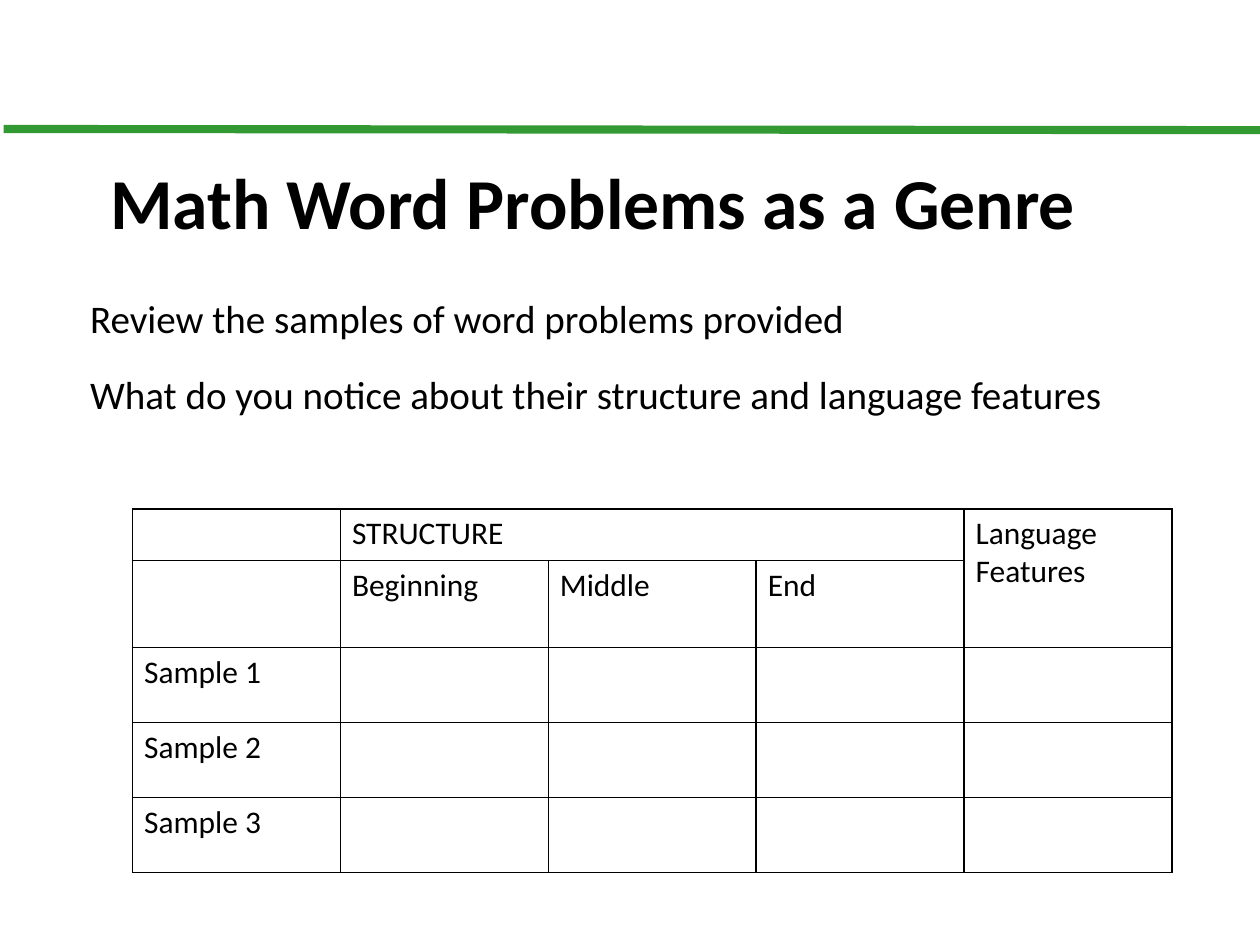
from lxml import etree
from pptx import Presentation
from pptx.dml.color import RGBColor
from pptx.enum.shapes import MSO_CONNECTOR as Connector
from pptx.oxml.ns import qn
from pptx.util import Inches, Pt

BLACK, GREEN = "000000", "339933"


def color(hex_value):
    return RGBColor.from_string(hex_value)


class SlideBuilder:
    """Hold the slide and its text style, and add each kind of element."""

    font_name = "Calibri"

    def __init__(self, slide):
        self.slide = slide

    def style(self, paragraph, size, bold=False):
        font = paragraph.font
        font.name, font.size, font.bold = self.font_name, Pt(size), bold
        font.color.rgb = color(BLACK)

    def rule(self, start, end, hex_value, width):
        line = self.slide.shapes.add_connector(
            Connector.STRAIGHT, *map(Inches, start + end))
        line.line.color.rgb = color(hex_value)
        line.line.width = Pt(width)
        etree.SubElement(line._element.spPr, qn("a:effectLst"))

    def text(self, box, lines, size, bold=False, space_after=0):
        frame = self.slide.shapes.add_textbox(*map(Inches, box)).text_frame
        frame.word_wrap = True
        frame.text = "\n".join(lines)
        for paragraph in frame.paragraphs:
            paragraph.space_after = Pt(space_after)
            self.style(paragraph, size, bold)

    def border(self, cell, width):
        properties = cell._tc.get_or_add_tcPr()
        for index, side in enumerate(("lnL", "lnR", "lnT", "lnB")):
            line = etree.Element(qn(f"a:{side}"), w=str(Pt(width)))
            fill = etree.SubElement(line, qn("a:solidFill"))
            etree.SubElement(fill, qn("a:srgbClr"), val=BLACK)
            properties.insert(index, line)

    def table(self, left, top, column_width, row_heights, rows, merges, size):
        columns = len(rows[0])
        table = self.slide.shapes.add_table(
            len(rows), columns, Inches(left), Inches(top),
            Inches(column_width * columns), Inches(sum(row_heights))).table
        table.first_row = table.horz_banding = False
        for column in table.columns:
            column.width = Inches(column_width)
        for row, height, labels in zip(table.rows, row_heights, rows):
            row.height = Inches(height)
            for cell, label in zip(row.cells, labels):
                cell.text = label
                cell.fill.background()
                self.style(cell.text_frame.paragraphs[0], size)
                self.border(cell, 1)
        for first, last in merges:
            table.cell(*first).merge(table.cell(*last))


def main():
    presentation = Presentation()
    presentation.slide_width, presentation.slide_height = Inches(10.75), Inches(8)
    builder = SlideBuilder(
        presentation.slides.add_slide(presentation.slide_layouts[6]))

    builder.rule((0.03, 1.1), (10.75, 1.11), GREEN, 5)
    builder.text((0.67, 2.46, 8.86, 1.57), [
        "Review the samples of word problems provided",
        "What do you notice about their structure and language features",
    ], 24, space_after=18)

    rows = [["", "STRUCTURE", "", "", "Language Features"],
            ["", "Beginning", "Middle", "End", ""]]
    rows += [[f"Sample {number}", "", "", "", ""] for number in range(1, 4)]
    builder.table(1.13, 4.34, 1.774, [0.44, 0.74] + [0.64] * 3, rows,
                  [((0, 1), (0, 3)), ((0, 4), (1, 4))], 19.3)

    builder.text((0.84, 1.3, 8.88, 1.17), ["Math Word Problems as a Genre"],
                 44, bold=True)
    presentation.save("out.pptx")


if __name__ == "__main__":
    main()
